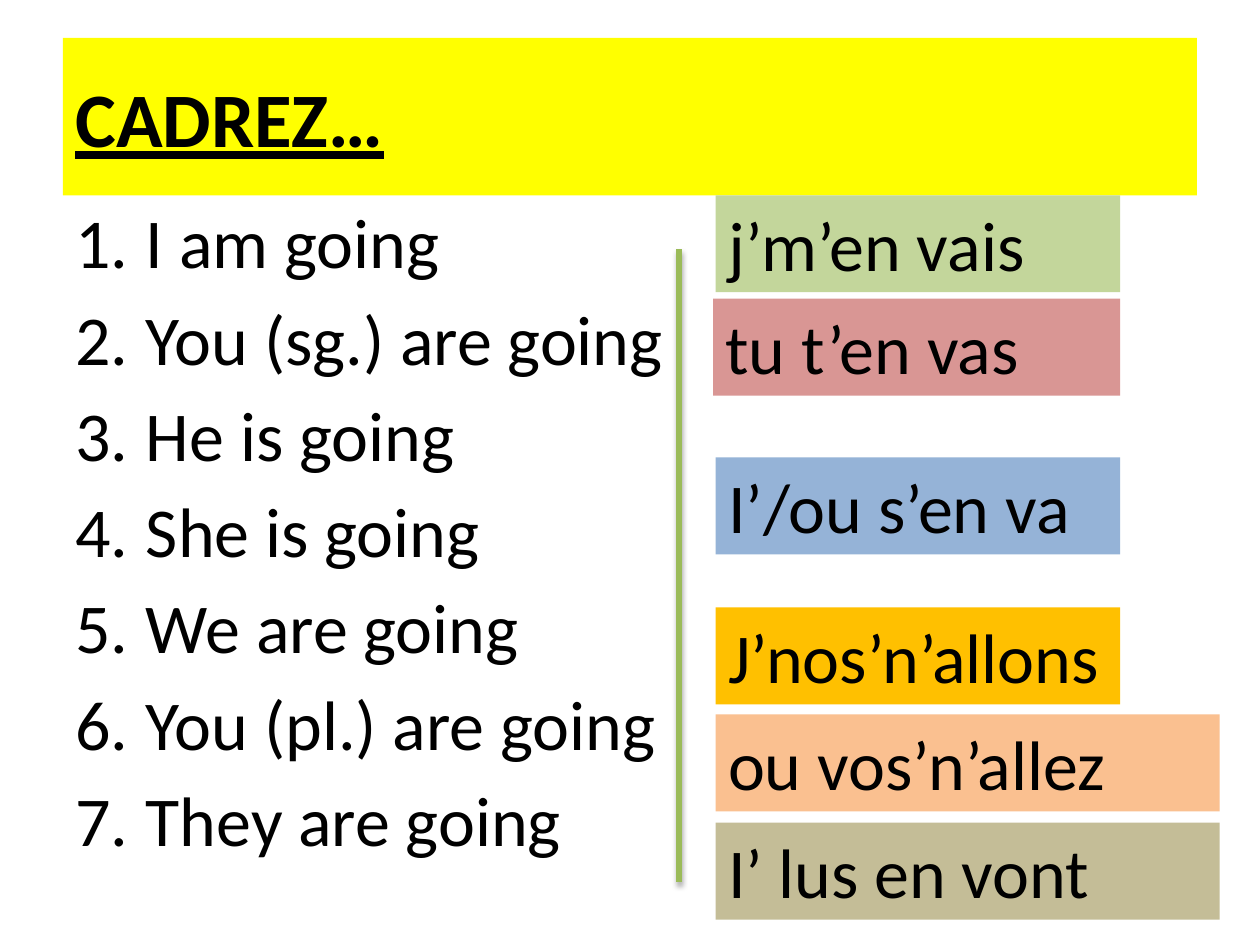
"""Build a conjugation slide that pairs English phrases with coloured answers."""
from lxml.etree import SubElement
from pptx import Presentation
from pptx.dml.color import RGBColor
from pptx.enum.shapes import MSO_CONNECTOR
from pptx.enum.text import MSO_ANCHOR, MSO_AUTO_SIZE
from pptx.oxml.ns import qn
from pptx.util import Inches, Pt

BLACK = RGBColor(0x00, 0x00, 0x00)
YELLOW = RGBColor(0xFF, 0xFF, 0x00)
LEAF = RGBColor(0x9B, 0xBB, 0x59)
GREEN = RGBColor(0xC3, 0xD6, 0x9B)
ROSE = RGBColor(0xD9, 0x96, 0x94)
BLUE = RGBColor(0x95, 0xB3, 0xD7)
GOLD = RGBColor(0xFF, 0xC0, 0x00)
PEACH = RGBColor(0xFA, 0xC0, 0x90)
TAN = RGBColor(0xC4, 0xBD, 0x97)

PHRASES = [
    "I am going", "You (sg.) are going", "He is going", "She is going",
    "We are going", "You (pl.) are going", "They are going",
]
ANSWERS = [
    ("j’m’en vais", 5.68, 1.55, 3.21, GREEN),
    ("tu t’en vas", 5.66, 2.37, 3.23, ROSE),
    ("I’/ou s’en va", 5.68, 3.63, 3.21, BLUE),
    ("J’nos’n’allons", 5.68, 4.82, 3.21, GOLD),
    ("ou vos’n’allez", 5.68, 5.67, 4, PEACH),
    ("I’ lus en vont", 5.68, 6.53, 4, TAN),
]


def set_font(paragraph, size):
    """Give a paragraph the slide's typeface and colour."""
    paragraph.font.name = "Calibri"
    paragraph.font.size = Pt(size)
    paragraph.font.color.rgb = BLACK


def add_box(page, text, left, top, width, height, size=40, fill=None):
    """Add a wrapping text box, filled when a colour is given."""
    box = page.shapes.add_textbox(
        Inches(left), Inches(top), Inches(width), Inches(height))
    if fill is not None:
        box.fill.solid()
        box.fill.fore_color.rgb = fill
    box.text_frame.word_wrap = True
    box.text_frame.text = text
    for paragraph in box.text_frame.paragraphs:
        set_font(paragraph, size)
    return box


def add_title(page, text):
    """Add the yellow title band."""
    box = add_box(page, text, 0.5, 0.3, 9, 1.25, 44, YELLOW)
    box.text_frame.vertical_anchor = MSO_ANCHOR.MIDDLE
    font = box.text_frame.paragraphs[0].font
    font.bold = True
    font.underline = True


def add_numbered_list(page, phrases):
    """Add the automatically numbered phrases."""
    box = add_box(page, "\n".join(phrases), 0.5, 1.53, 9, 5.75)
    for index, paragraph in enumerate(box.text_frame.paragraphs):
        properties = paragraph._p.get_or_add_pPr()
        properties.set("marL", str(Inches(0.56)))
        properties.set("indent", str(Inches(-0.56)))
        number = SubElement(properties, qn("a:buAutoNum"), type="arabicPeriod")
        properties.insert(0, number)
        if index:
            paragraph.space_before = Pt(7)


def add_answer(page, text, left, top, width, fill):
    """Add one coloured answer that fits its text."""
    box = add_box(page, text, left, top, width, 0.77, fill=fill)
    box.text_frame.auto_size = MSO_AUTO_SIZE.SHAPE_TO_FIT_TEXT


def add_divider(page):
    """Add the vertical green line with its soft shadow."""
    divider = page.shapes.add_connector(
        MSO_CONNECTOR.STRAIGHT, Inches(5.39), Inches(1.98), Inches(5.39), Inches(7))
    divider.line.color.rgb = LEAF
    divider.line.width = Pt(3)
    effects = SubElement(divider._element.spPr, qn("a:effectLst"))
    shadow = SubElement(
        effects, qn("a:outerShdw"), blurRad=str(Pt(3.1)), dist=str(Pt(1.8)),
        dir="5400000", rotWithShape="0")
    color = SubElement(shadow, qn("a:srgbClr"), val=str(BLACK))
    SubElement(color, qn("a:alpha"), val="35000")


def main():
    """Build and save the deck."""
    deck = Presentation()
    deck.slide_width = Inches(10)
    deck.slide_height = Inches(7.5)
    page = deck.slides.add_slide(deck.slide_layouts[6])
    add_title(page, "CADREZ…")
    add_numbered_list(page, PHRASES)
    for answer in ANSWERS:
        add_answer(page, *answer)
    add_divider(page)
    deck.save("out.pptx")


if __name__ == "__main__":
    main()
